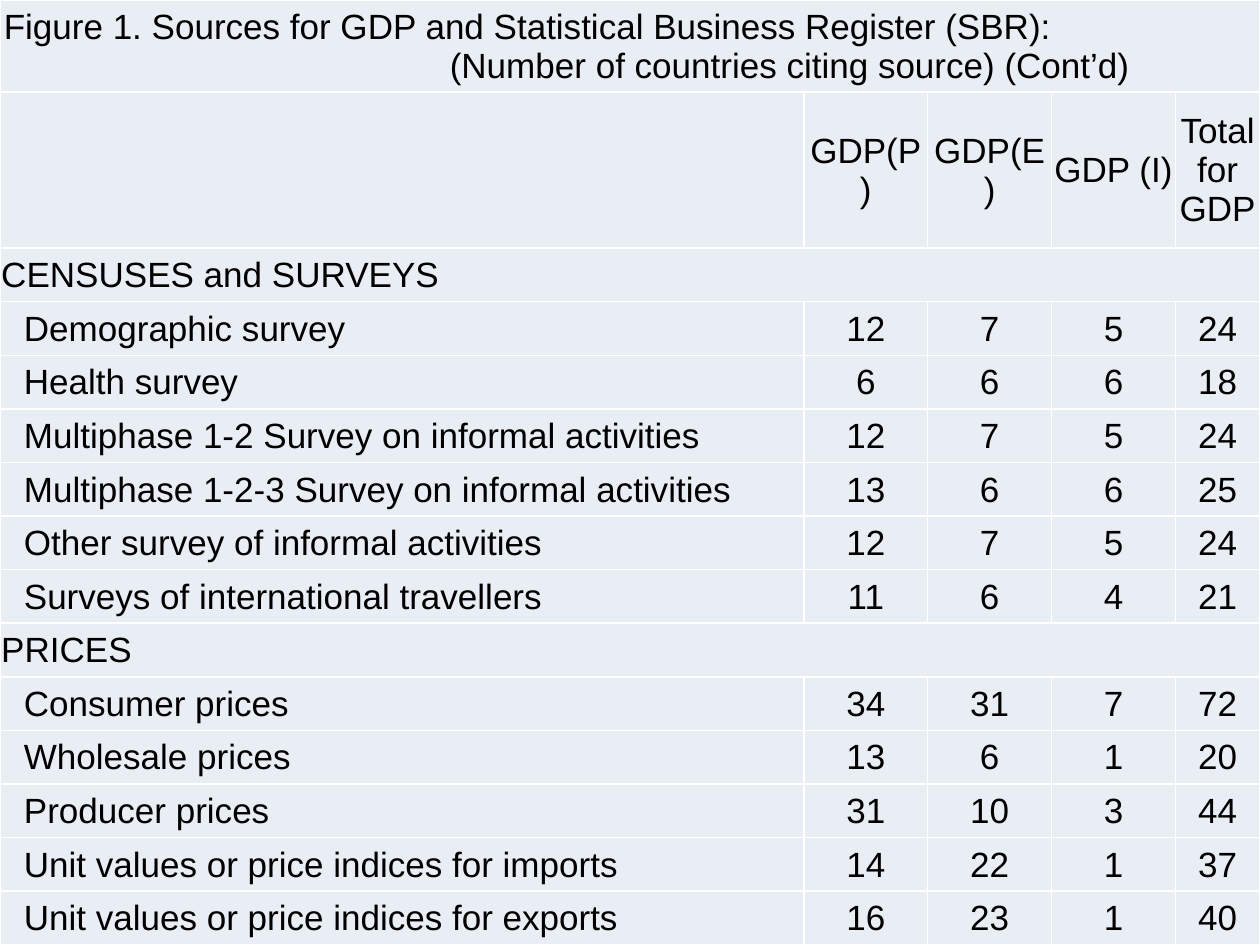
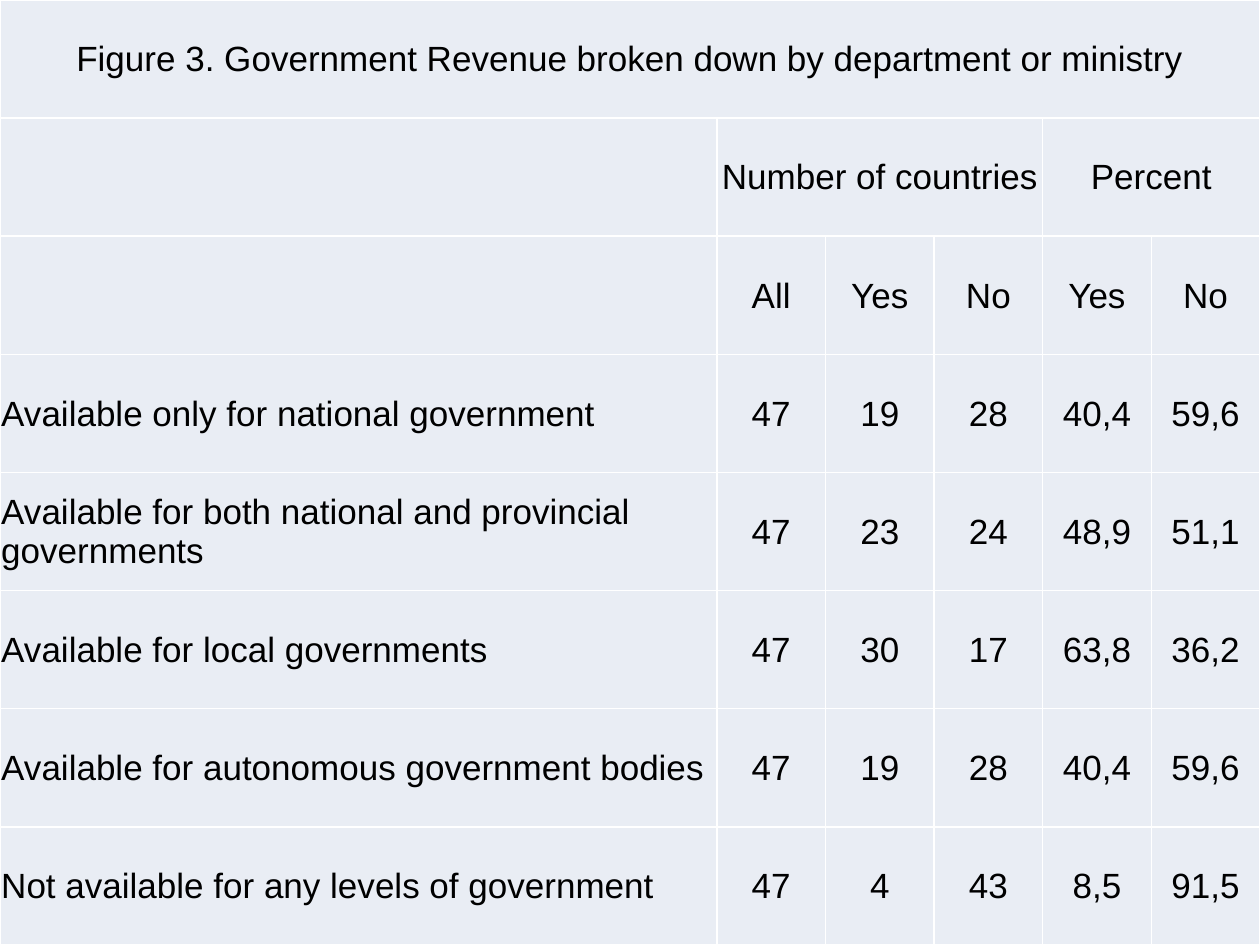
"""Build two full-slide statistical tables on national accounts sources."""
from lxml import etree
from pptx import Presentation
from pptx.dml.color import RGBColor
from pptx.enum.text import MSO_ANCHOR as Anchor, PP_ALIGN as Align
from pptx.oxml.ns import qn
from pptx.util import Inches, Pt

COLORS = {"cell": "E9EDF4", "border": "FFFFFF", "text": "000000"}
FONT, SIZE = "Arial", 20
WIDTH, HEIGHT = 10, 7.5
INSET = 0.01

SOURCES = {
    "title": [
        ("Figure 1. Sources for GDP and Statistical Business Register (SBR):", 0.02),
        ("(Number of countries citing source) (Cont’d)", 3.56),
    ],
    "rows": [
        ("", "GDP(P)", "GDP(E)", "GDP (I)", "Total for GDP"),
        ("CENSUSES and SURVEYS", None, None, None, None),
        ("Demographic survey", "12", "7", "5", "24"),
        ("Health survey", "6", "6", "6", "18"),
        ("Multiphase 1-2 Survey on informal activities", "12", "7", "5", "24"),
        ("Multiphase 1-2-3 Survey on informal activities", "13", "6", "6", "25"),
        ("Other survey of informal activities", "12", "7", "5", "24"),
        ("Surveys of international travellers", "11", "6", "4", "21"),
        ("PRICES", None, None, None, None),
        ("Consumer prices", "34", "31", "7", "72"),
        ("Wholesale prices", "13", "6", "1", "20"),
        ("Producer prices", "31", "10", "3", "44"),
        ("Unit values or price indices for imports", "14", "22", "1", "37"),
        ("Unit values or price indices for exports", "16", "23", "1", "40"),
    ],
    "label_inset": 0.19,
    "widths": [6.38, None, None, None, 0.67],
    "top_heights": [0.73, 1.24],
}

REVENUE = {
    "title": [("Figure 3. Government Revenue broken down by department or ministry", None)],
    "rows": [
        ("", "Number of countries", None, None, "Percent", None),
        ("", "All", "Yes", "No", "Yes", "No"),
        ("Available only for national government", "47", "19", "28", "40,4", "59,6"),
        ("Available for both national and provincial governments",
         "47", "23", "24", "48,9", "51,1"),
        ("Available for local governments", "47", "30", "17", "63,8", "36,2"),
        ("Available for autonomous government bodies", "47", "19", "28", "40,4", "59,6"),
        ("Not available for any levels of government", "47", "4", "43", "8,5", "91,5"),
    ],
    "label_inset": INSET,
    "widths": [5.69, None, None, None, None, None],
    "top_heights": [],
}


def share_out(lengths, total):
    """Replace each None by an equal part of the remaining length."""
    known = [length for length in lengths if length is not None]
    part = (total - sum(known)) / max(1, len(lengths) - len(known))
    return [part if length is None else length for length in lengths]


def style_cell(cell):
    """Give a cell its fill, white borders, margins and anchor."""
    cell.fill.solid()
    cell.fill.fore_color.rgb = RGBColor.from_string(COLORS["cell"])
    cell.vertical_anchor = Anchor.MIDDLE
    cell.margin_left = cell.margin_top = cell.margin_right = Inches(INSET)
    cell.margin_bottom = 0
    properties = cell._tc.get_or_add_tcPr()
    for place, side in enumerate(("lnL", "lnR", "lnT", "lnB")):
        line = etree.Element(qn(f"a:{side}"), w=str(Pt(1)))
        fill = etree.SubElement(line, qn("a:solidFill"))
        etree.SubElement(fill, qn("a:srgbClr"), val=COLORS["border"])
        properties.insert(place, line)


def write(para, text, align):
    """Add one formatted run to a paragraph."""
    para.alignment = align
    span = para.add_run()
    span.text = text
    span.font.name, span.font.size = FONT, Pt(SIZE)
    span.font.bold = False
    span.font.color.rgb = RGBColor.from_string(COLORS["text"])


def write_title(cell, lines):
    """Write title lines, indented, or centred when there is no indent."""
    for number, (text, indent) in enumerate(lines):
        frame = cell.text_frame
        para = frame.add_paragraph() if number else frame.paragraphs[0]
        write(para, text, Align.CENTER if indent is None else Align.LEFT)
        if indent is not None:
            para._p.get_or_add_pPr().set("marL", str(Inches(indent)))


def add_table_slide(deck, content):
    """Add a slide filled by one table."""
    page = deck.slides.add_slide(deck.slide_layouts[6])
    rows, widths, tops = content["rows"], content["widths"], content["top_heights"]
    row_count = len(rows) + 1
    table = page.shapes.add_table(row_count, len(widths), 0, 0,
                                  Inches(WIDTH), Inches(HEIGHT)).table
    table.first_row = table.horz_banding = False
    for column, width in zip(table.columns, share_out(widths, WIDTH)):
        column.width = Inches(width)
    heights = tops + [None] * (row_count - len(tops))
    for row, height in zip(table.rows, share_out(heights, HEIGHT)):
        row.height = Inches(height)
    for cell in table.iter_cells():
        style_cell(cell)

    table.cell(0, 0).merge(table.cell(0, len(widths) - 1))
    write_title(table.cell(0, 0), content["title"])
    for row, texts in enumerate(rows, 1):
        for column, text in enumerate(texts):
            if not text:
                continue
            cell = table.cell(row, column)
            end = column + 1
            while end < len(texts) and texts[end] is None:
                end += 1
            if end > column + 1:
                cell.merge(table.cell(row, end - 1))
            elif column == 0:
                cell.margin_left = Inches(content["label_inset"])
            write(cell.text_frame.paragraphs[0], text,
                  Align.CENTER if column else Align.LEFT)


def main():
    """Build and save the deck."""
    deck = Presentation()
    deck.slide_width, deck.slide_height = Inches(WIDTH), Inches(HEIGHT)
    for content in (SOURCES, REVENUE):
        add_table_slide(deck, content)
    deck.save("out.pptx")


if __name__ == "__main__":
    main()
